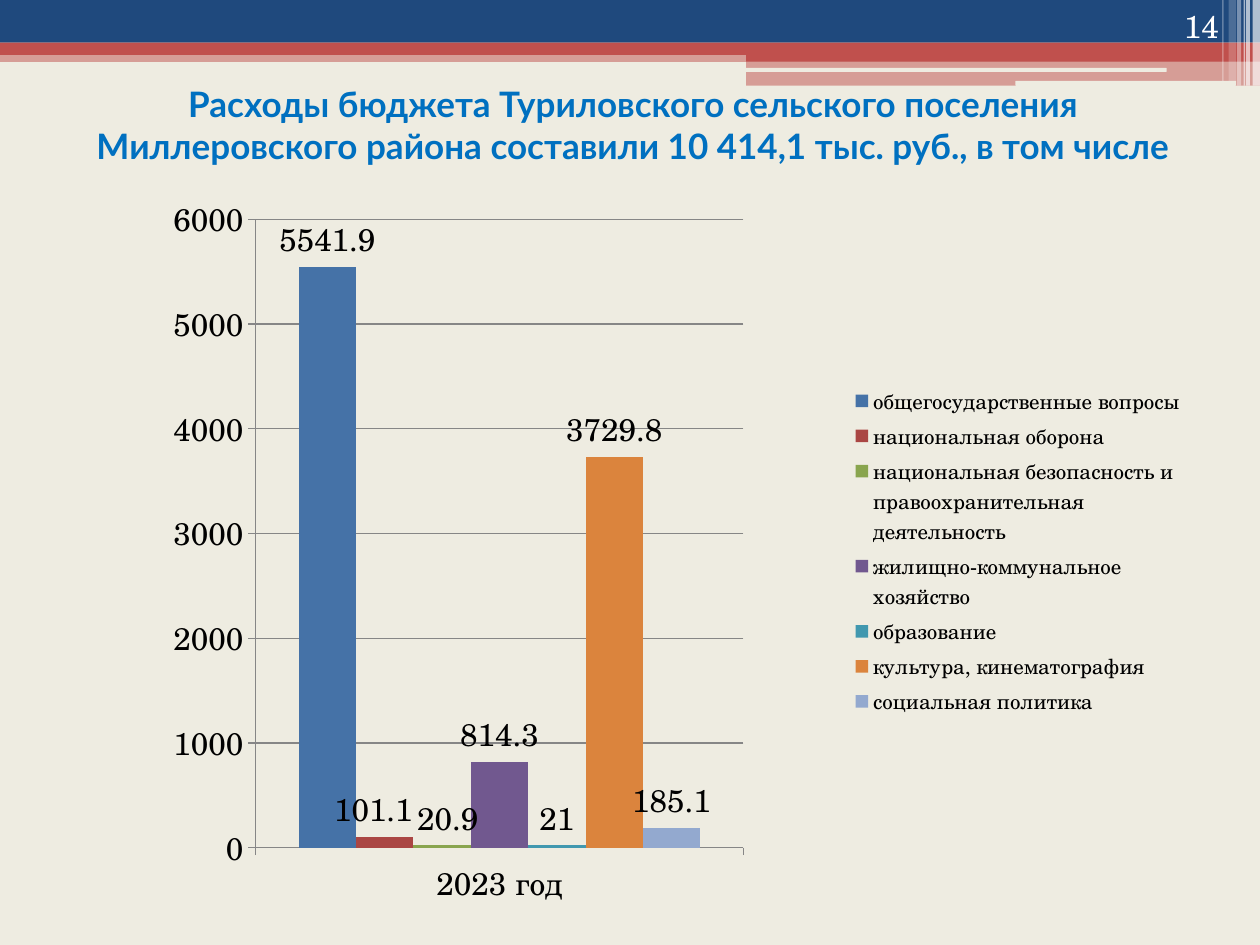
from dataclasses import dataclass
from lxml import etree
from pptx import Presentation
from pptx.chart.data import CategoryChartData
from pptx.dml.color import RGBColor
from pptx.enum.chart import XL_CHART_TYPE, XL_LABEL_POSITION, XL_LEGEND_POSITION, XL_TICK_MARK
from pptx.enum.shapes import MSO_SHAPE
from pptx.enum.text import MSO_ANCHOR, PP_ALIGN
from pptx.oxml.ns import qn
from pptx.util import Cm, Pt


@dataclass(frozen=True)
class Theme:
    paper: str = "EEECE1"
    navy: str = "1F497D"
    red: str = "C0504D"
    white: str = "FFFFFF"
    title: str = "0070C0"
    text: str = "000000"
    grid: str = "868686"
    series: tuple = ("4572A7", "AA4643", "89A54E", "71588F", "4198AF", "DB843D", "93A9CF")
    heading_font: str = "Lato"
    body_font: str = "TeX Gyre Schola"
    heading_size: int = 20
    body_size: int = 18
    legend_size: int = 12


THEME = Theme()

BANDS = [
    (0, 1.02, 25.4, 0.23, THEME.red, 50),
    (0, 0, 25.4, 0.86, THEME.navy, 100),
    (0, 0.86, 25.4, 0.25, THEME.red, 100),
    (15.04, 0.99, 10.36, 0.25, THEME.red, 100),
    (15.04, 1.22, 10.36, 0.51, THEME.red, 50),
]
SLOTS = [(15.01, 1.37, 8.51, 0.08), (20.47, 1.63, 4.45, 0.1)]
STRIPES = [
    (25.25, 0.15, 1.73, 65),
    (25.12, 0.08, 1.73, 65),
    (25.07, 0.03, 1.73, 60),
    (24.94, 0.08, 1.73, 40),
    (24.77, 0.15, 1.63, 20),
    (24.64, 0.03, 1.63, 30),
]
EXPENSES = [
    ("общегосударственные вопросы", 5541.9),
    ("национальная оборона", 101.1),
    ("национальная безопасность и правоохранительная деятельность", 20.9),
    ("жилищно-коммунальное хозяйство", 814.3),
    ("образование", 21),
    ("культура, кинематография", 3729.8),
    ("социальная политика", 185.1),
]
LABEL_SHIFTS = {1: -0.01, 2: 0.005}


def rgb(value):
    return RGBColor.from_string(value)


def manual_layout(**values):
    layout = etree.Element(qn("c:layout"))
    manual = etree.SubElement(layout, qn("c:manualLayout"))
    for tag, value in values.items():
        etree.SubElement(manual, qn(f"c:{tag}")).set("val", str(value))
    return layout


class Deck:
    """Draws themed elements on the current slide."""

    def __init__(self, prs, theme):
        self.theme = theme
        self.slide = prs.slides.add_slide(prs.slide_layouts[6])
        fill = self.slide.background.fill
        fill.solid()
        fill.fore_color.rgb = rgb(theme.paper)

    def style(self, font, size, color, name):
        font.size, font.name = Pt(size), name
        font.color.rgb = rgb(color)

    def bar(self, x, y, w, h, color, opacity=100, kind=MSO_SHAPE.RECTANGLE):
        sp = self.slide.shapes.add_shape(kind, Cm(x), Cm(y), Cm(w), Cm(h))
        sp.shadow.inherit = False
        sp.line.fill.background()
        sp.fill.solid()
        sp.fill.fore_color.rgb = rgb(color)
        if opacity < 100:
            clr = sp.fill._xPr.find(f".//{qn('a:srgbClr')}")
            etree.SubElement(clr, qn("a:alpha")).set("val", str(opacity * 1000))
        return sp

    def text(self, x, y, w, h, text, size, color, name, align, anchor, bold=False):
        tf = self.slide.shapes.add_textbox(Cm(x), Cm(y), Cm(w), Cm(h)).text_frame
        tf.word_wrap, tf.vertical_anchor = True, anchor
        p = tf.paragraphs[0]
        p.text, p.alignment, p.font.bold = text, align, bold
        self.style(p.font, size, color, name)
        return tf

    def columns(self, x, y, w, h, category, rows, plot_area, shifts):
        t = self.theme
        data = CategoryChartData()
        data.categories = [category]
        for name, value in rows:
            data.add_series(name, [value])
        chart = self.slide.shapes.add_chart(
            XL_CHART_TYPE.COLUMN_CLUSTERED, Cm(x), Cm(y), Cm(w), Cm(h), data).chart
        self.style(chart.font, t.body_size, t.text, t.body_font)
        chart.has_title = False
        chart.has_legend = True
        chart.legend.position = XL_LEGEND_POSITION.RIGHT
        chart.legend.include_in_layout = False
        self.style(chart.legend.font, t.legend_size, t.text, t.body_font)
        self.axes(chart)
        plot = chart.plots[0]
        plot.vary_by_categories = False
        plot.gap_width, plot.overlap = 150, 0
        for i, (series, color) in enumerate(zip(plot.series, t.series)):
            series.format.fill.solid()
            series.format.fill.fore_color.rgb = rgb(color)
            labels = series.data_labels
            labels.show_value = True
            labels.position = XL_LABEL_POSITION.OUTSIDE_END
            if i in shifts:
                series.points[0].data_label.position = XL_LABEL_POSITION.OUTSIDE_END
                idx = series._element.find(f".//{qn('c:dLbl')}/{qn('c:idx')}")
                idx.addnext(manual_layout(x=shifts[i], y=0))
        area = chart._chartSpace.find(f".//{qn('c:plotArea')}")
        for old in area.findall(qn("c:layout")):
            area.remove(old)
        left, top, width, height = plot_area
        area.insert(0, manual_layout(layoutTarget="inner", xMode="edge", yMode="edge",
                                     x=left, y=top, w=width, h=height))

    def axes(self, chart):
        value = chart.value_axis
        value.minimum_scale, value.maximum_scale, value.major_unit = 0, 6000, 1000
        value.has_major_gridlines = True
        for axis in (value, chart.category_axis):
            axis.major_tick_mark = XL_TICK_MARK.OUTSIDE
        for item in (value, chart.category_axis, value.major_gridlines):
            item.format.line.color.rgb = rgb(self.theme.grid)
            item.format.line.width = Pt(0.75)


def main():
    prs = Presentation()
    prs.slide_width, prs.slide_height = Cm(25.4), Cm(19.05)
    t, s = THEME, Deck(prs, THEME)
    for band in BANDS:
        s.bar(*band)
    for slot in SLOTS:
        s.bar(*slot, t.paper, kind=MSO_SHAPE.ROUNDED_RECTANGLE)
    for x, w, h, opacity in STRIPES:
        s.bar(x, 0, w, h, t.white, opacity)
    tf = s.text(0.99, 1.78, 23.55, 2.29,
                "Расходы бюджета Туриловского сельского поселения Миллеровского района "
                "составили 10 414,1 тыс. руб., в том числе",
                t.heading_size, t.title, t.heading_font,
                PP_ALIGN.CENTER, MSO_ANCHOR.MIDDLE, bold=True)
    tf.margin_bottom = Cm(0.97)
    s.columns(1.27, 3.96, 22.86, 14.3, "2023 год", EXPENSES,
              (0.17, 0.03, 0.43, 0.89), LABEL_SHIFTS)
    s.text(22.71, 0, 2.11, 1.02, "14", t.body_size, t.white, t.body_font,
           PP_ALIGN.RIGHT, MSO_ANCHOR.BOTTOM)
    prs.save("out.pptx")


if __name__ == "__main__":
    main()
